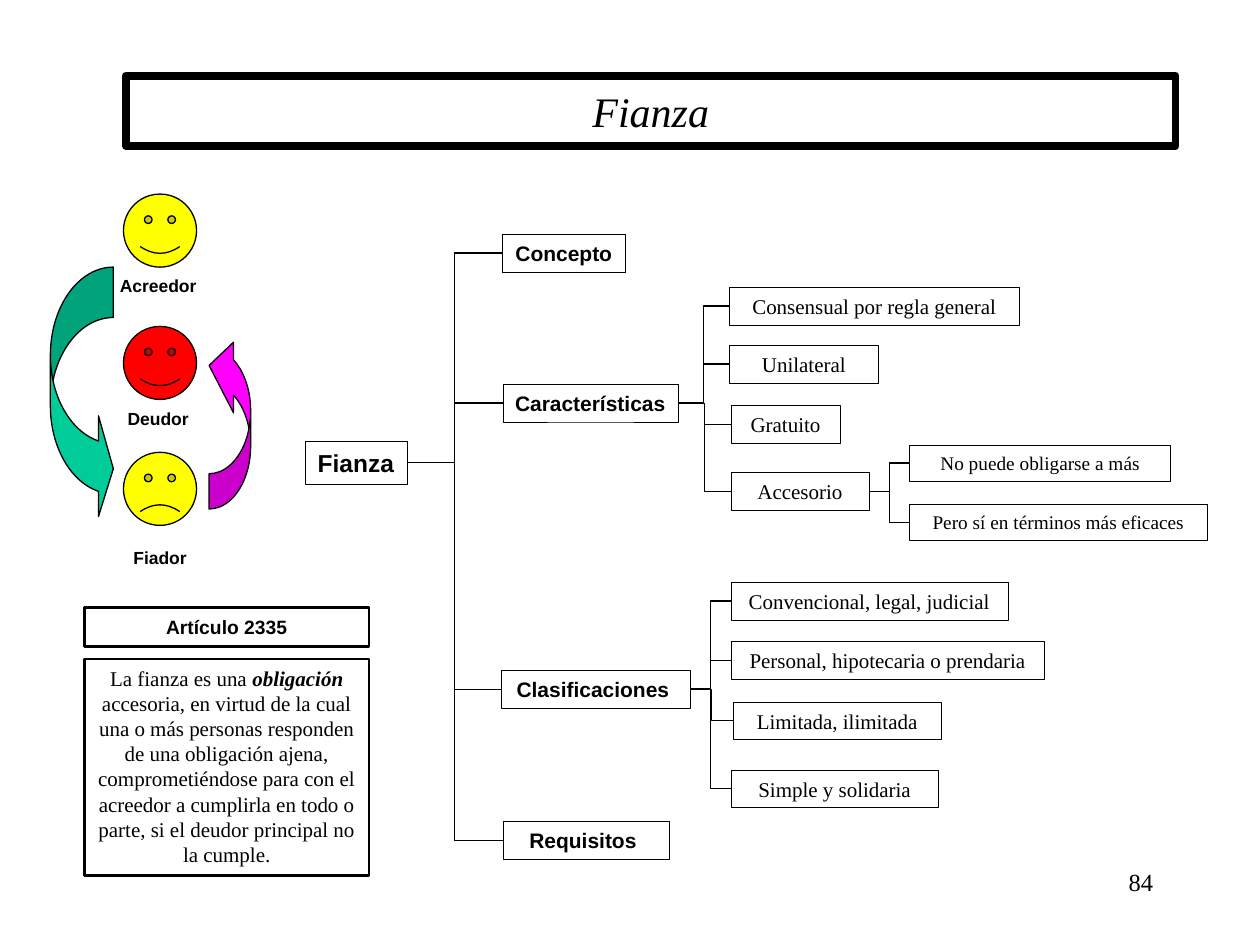
from lxml import etree
from pptx import Presentation
from pptx.dml.color import RGBColor
from pptx.enum.shapes import MSO_CONNECTOR, MSO_SHAPE
from pptx.enum.text import MSO_ANCHOR, MSO_AUTO_SIZE, PP_ALIGN
from pptx.oxml.ns import qn
from pptx.util import Inches, Pt

RECT, SMILEY = MSO_SHAPE.RECTANGLE, MSO_SHAPE.SMILEY_FACE
RIGHT_ARROW, LEFT_ARROW = MSO_SHAPE.CURVED_RIGHT_ARROW, MSO_SHAPE.CURVED_LEFT_ARROW
ELBOW = MSO_CONNECTOR.ELBOW
TOP, MIDDLE = MSO_ANCHOR.TOP, MSO_ANCHOR.MIDDLE
CENTER, RIGHT = PP_ALIGN.CENTER, PP_ALIGN.RIGHT
NO_FIT = MSO_AUTO_SIZE.NONE
SERIF, SANS = "Times New Roman", "Arial"
rgb = RGBColor.from_string

prs = Presentation()
prs.slide_width, prs.slide_height = Inches(10), Inches(7.5)
s = prs.slides.add_slide(prs.slide_layouts[5])
CELL = prs.slide_width / 100  # the slide is a grid of 100 columns by 75 rows


def grid(*cells):
    return [round(c * CELL) for c in cells]


def write(sp, runs, size, name=SERIF, align=CENTER, anchor=MIDDLE, wrap=True):
    """Fill a shape with one paragraph of (text, font formats) runs."""
    tf = sp.text_frame
    frame = {"word_wrap": wrap, "auto_size": NO_FIT, "vertical_anchor": anchor}
    for key, value in frame.items():
        setattr(tf, key, value)
    p = tf.paragraphs[0]
    p.alignment = align
    for text, extra in runs:
        r = p.add_run()
        r.text = text
        fmt = {"name": name, "size": Pt(size), "bold": False, "italic": False}
        for key, value in (fmt | extra).items():
            setattr(r.font, key, value)
        r.font.color.rgb = rgb("000000")


BOLD, ITALIC = {"bold": True}, {"italic": True}

# Title
title = s.shapes.title
title.left, title.top, title.width, title.height = grid(10, 6, 83.3, 5.6)
title.line.color.rgb = rgb("000000")
title.line.width = Pt(4.5)
write(title, [("Fianza", ITALIC)], 24)

# Slide number
num = s.shapes.add_textbox(*grid(71.7, 68.3, 20.8, 5))
write(num, [("84", {})], 14, align=RIGHT, anchor=TOP)

# Definition boxes: top, height, size, font, anchor, runs
definition = [
    ("La fianza es una ", {}),
    ("obligación", BOLD | ITALIC),
    (" accesoria, en virtud de la cual una o más personas responden de una "
     "obligación ajena, comprometiéndose para con el acreedor a cumplirla en "
     "todo o parte, si el deudor principal no la cumple.", {}),
]
for top, h, size, name, anchor, runs in [
    (48.2, 3.1, 11, SANS, MIDDLE, [("Artículo 2335", BOLD)]),
    (52.3, 17.2, 12, SERIF, TOP, definition),
]:
    sp = s.shapes.add_shape(RECT, *grid(6.7, top, 22.6, h))
    sp.shadow.inherit = False
    sp.fill.background()
    sp.line.color.rgb = rgb("000000")
    sp.line.width = Pt(1.5)
    write(sp, runs, size, name, anchor=anchor)

# Parties and the arrows between them: kind, place, fill, adjustments
for kind, at, fill, adjustments in [
    (SMILEY, (9.8, 15.4, 5.8, 5.8), "FFFF00", [0.047]),
    (SMILEY, (9.8, 25.9, 5.8, 5.8), "FF0000", [0.047]),
    (SMILEY, (9.8, 35.9, 5.8, 5.8), "FFFF00", [-0.047]),
    (RIGHT_ARROW, (4, 21.2, 5, 20), "00CC99", [0.8, 1.6, 0.236]),
    (LEFT_ARROW, (16.6, 26.2, 3.3, 14.2), "FF00FF", [0.85, 1.7, 0.589]),
]:
    sp = s.shapes.add_shape(kind, *grid(*at))
    sp.shadow.inherit = False
    sp.fill.solid()
    sp.fill.fore_color.rgb = rgb(fill)
    sp.line.color.rgb = rgb("000000")
    sp.line.width = Pt(0.75)
    for i, value in enumerate(adjustments):
        sp.adjustments[i] = value
    if kind == LEFT_ARROW:
        sp.element.spPr.xfrm.set("flipV", "1")

for text, left, top, w in [
    ("Acreedor", 8.5, 21.3, 8.1),
    ("Deudor", 9.1, 31.9, 6.9),
    ("Fiador", 9.6, 42.9, 6.2),
]:
    label = s.shapes.add_textbox(*grid(left, top, w, 2.7))
    write(label, [(text, BOLD)], 10, SANS, wrap=False)

# Tree boxes by level: font, bold, then (text, parent, left, top, width)
levels = [
    (14, 3.4, SANS, True, [("Fianza", None, 24.2, 35, 8.1)]),
    (12, 3, SANS, True, [
        ("Concepto", "Fianza", 39.9, 18.6, 9.7),
        ("Características", "Fianza", 39.9, 30.5, 13.9),
        ("Clasificaciones ", "Fianza", 39.8, 53.2, 15),
        ("Requisitos ", "Fianza", 39.9, 65.2, 13.2),
    ]),
    (12, 3, SERIF, False, [
        ("Consensual por regla general", "Características", 57.9, 22.8, 23),
        ("Unilateral", "Características", 57.9, 27.4, 11.8),
        ("Gratuito", "Características", 58, 32.2, 8.7),
        ("Accesorio", "Características", 58, 37.5, 11),
        ("Convencional, legal, judicial", "Clasificaciones ", 58, 46.2, 22),
        ("Personal, hipotecaria o prendaria", "Clasificaciones ", 58, 50.9, 24.9),
        ("Limitada, ilimitada", "Clasificaciones ", 58.2, 55.7, 16.5),
        ("Simple y solidaria", "Clasificaciones ", 58, 61.1, 16.5),
    ]),
    (11, 2.9, SERIF, False, [
        ("No puede obligarse a más", "Accesorio", 72.2, 35.3, 20.7),
        ("Pero sí en términos más eficaces", "Accesorio", 72.2, 40, 23.6),
    ]),
]
boxes = {}
for size, h, name, bold, nodes in levels:
    for text, parent, left, top, w in nodes:
        sp = s.shapes.add_shape(RECT, *grid(left, top, w, h))
        sp.shadow.inherit = False
        sp.fill.background()
        sp.line.color.rgb = rgb("000000")
        sp.line.width = Pt(0.25)
        write(sp, [(text, {"bold": bold})], size, name, wrap=not bold)
        boxes[text] = sp
        if parent is None:
            continue
        # Branch from the parent's right side to the child's left side
        a = boxes[parent]
        cx = s.shapes.add_connector(
            ELBOW, a.left + a.width, a.top + a.height // 2,
            sp.left, sp.top + sp.height // 2)
        cx.begin_connect(a, 3)
        cx.end_connect(sp, 1)
        cx.line.color.rgb = rgb("000000")
        cx.line.width = Pt(0.75)
        etree.SubElement(cx.element.spPr, qn("a:effectLst"))

prs.save("out.pptx")
